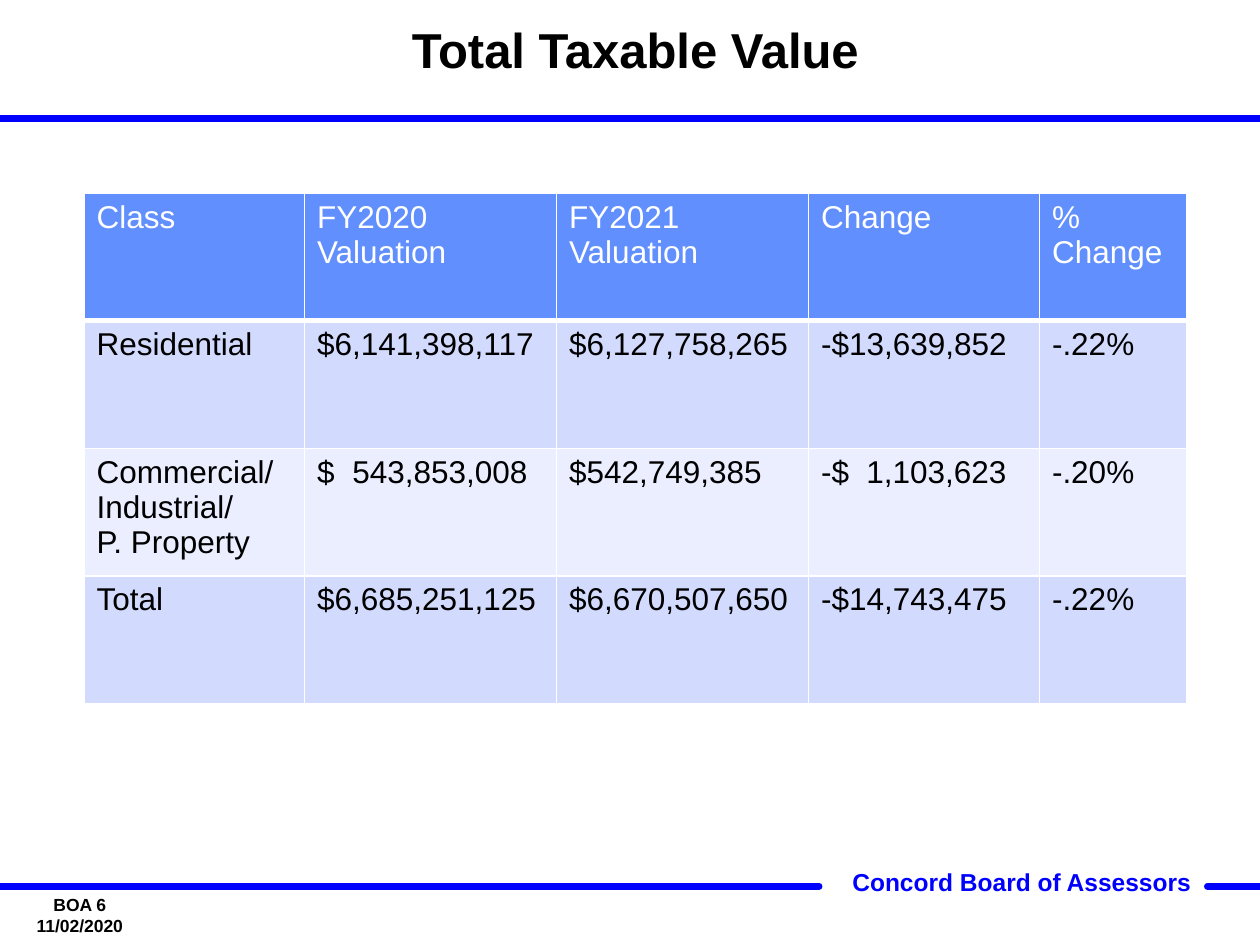
"""Build the Total Taxable Value slide: a valuation table between two blue rules."""
from dataclasses import dataclass

from lxml import etree
from pptx import Presentation
from pptx.dml.color import RGBColor
from pptx.enum.shapes import MSO_CONNECTOR
from pptx.enum.text import MSO_ANCHOR, MSO_AUTO_SIZE, PP_ALIGN
from pptx.oxml.ns import qn
from pptx.util import Inches, Pt

STRAIGHT = MSO_CONNECTOR.STRAIGHT
TOP, MIDDLE = MSO_ANCHOR.TOP, MSO_ANCHOR.MIDDLE
LEFT, CENTER = PP_ALIGN.LEFT, PP_ALIGN.CENTER
FIT_SHAPE, FIT_NONE = MSO_AUTO_SIZE.SHAPE_TO_FIT_TEXT, MSO_AUTO_SIZE.NONE


@dataclass(frozen=True)
class Theme:
    font: str = "Arial"
    black: str = "000000"
    white: str = "FFFFFF"
    blue: str = "0000FF"
    header: str = "618FFD"
    bands: tuple = ("D2DBFE", "EAEEFF")
    title_size: int = 28
    table_size: int = 18
    board_size: int = 14
    footer_size: int = 10
    rule_width: int = 4
    border_width: int = 1
    header_border_width: int = 3


theme = Theme()
presentation = Presentation()
presentation.slide_width = Inches(10)
presentation.slide_height = Inches(7.5)
slide = presentation.slides.add_slide(presentation.slide_layouts[6])
column_unit = presentation.slide_width / 120
row_unit = presentation.slide_height / 90


def place(left, top, width, height):
    return (round(left * column_unit), round(top * row_unit),
            round(width * column_unit), round(height * row_unit))


def write(text_frame, lines, size, color, bold=False, align=LEFT):
    for index, line in enumerate(lines):
        paragraph = text_frame.paragraphs[0] if index == 0 else text_frame.add_paragraph()
        paragraph.text = line
        paragraph.alignment = align
        prefix, tab, _ = line.partition("\t")
        if tab:
            tab_list = etree.SubElement(paragraph._p.get_or_add_pPr(), qn("a:tabLst"))
            etree.SubElement(tab_list, qn("a:tab"), pos=str(tab_stops[prefix]), algn="l")
        paragraph.font.name = theme.font
        paragraph.font.size = Pt(size)
        paragraph.font.bold = bold
        paragraph.font.color.rgb = RGBColor.from_string(color)


rules = [(-4.2, 123.8, 11.25), (115, 127, 84.4), (-4, 78, 84.4)]
for start, end, row in rules:
    left, top, width, _ = place(start, row, end - start, 0)
    rule = slide.shapes.add_connector(STRAIGHT, left, top, left + width, top)
    rule.line.color.rgb = RGBColor.from_string(theme.blue)
    rule.line.width = Pt(theme.rule_width)
    rule.line._get_or_add_ln().set("cap", "rnd")
    etree.SubElement(rule._element.spPr, qn("a:effectLst"))

text_boxes = [
    (["Concord Board of Assessors"], (80, 82, 34.8, 4.1),
     theme.board_size, theme.blue, LEFT, TOP, False, FIT_SHAPE),
    (["BOA 6", "11/02/2020"], (3.2, 85, 8.8, 4.2),
     theme.footer_size, theme.black, CENTER, MIDDLE, False, FIT_NONE),
    (["Total Taxable Value"], (14, 0, 93, 10),
     theme.title_size, theme.black, CENTER, MIDDLE, True, FIT_NONE),
]
for lines, box, size, color, align, anchor, wrap, fit in text_boxes:
    shape = slide.shapes.add_textbox(*place(*box))
    text_frame = shape.text_frame
    text_frame.word_wrap = wrap
    text_frame.auto_size = fit
    text_frame.vertical_anchor = anchor
    write(text_frame, lines, size, color, True, align)
    if size == theme.title_size:
        text_frame.paragraphs[0].line_spacing = Pt(30)

tab_stops = {"$": Inches(0.28), "-$": Inches(0.36)}
valuations = [
    ["Class", "FY2020 Valuation", "FY2021\nValuation", "Change", "% Change"],
    ["Residential", "$6,141,398,117", "$6,127,758,265", "-$13,639,852", "-.22%"],
    ["Commercial/\nIndustrial/\nP. Property", "$\t543,853,008", "$542,749,385",
     "-$\t1,103,623", "-.20%"],
    ["Total", "$6,685,251,125", "$6,670,507,650", "-$14,743,475", "-.22%"],
]
column_spans = [21, 24, 24, 22, 14]
table_box = place(8, 18.4, sum(column_spans), 48.6)
table = slide.shapes.add_table(len(valuations), len(column_spans), *table_box).table
for column, span in zip(table.columns, column_spans):
    column.width = round(span * column_unit)

for row_index, values in enumerate(valuations):
    is_header = row_index == 0
    fill = theme.header if is_header else theme.bands[(row_index - 1) % 2]
    for column_index, value in enumerate(values):
        cell = table.cell(row_index, column_index)
        write(cell.text_frame, value.split("\n"), theme.table_size,
              theme.white if is_header else theme.black)
        properties = cell._tc.get_or_add_tcPr()
        for side in ("lnL", "lnR", "lnT", "lnB"):
            under_header = (row_index, side) in ((0, "lnB"), (1, "lnT"))
            width = theme.header_border_width if under_header else theme.border_width
            border = etree.SubElement(properties, qn(f"a:{side}"), w=str(Pt(width)))
            solid = etree.SubElement(border, qn("a:solidFill"))
            etree.SubElement(solid, qn("a:srgbClr"), val=theme.white)
        cell.fill.solid()
        cell.fill.fore_color.rgb = RGBColor.from_string(fill)

presentation.save("out.pptx")
